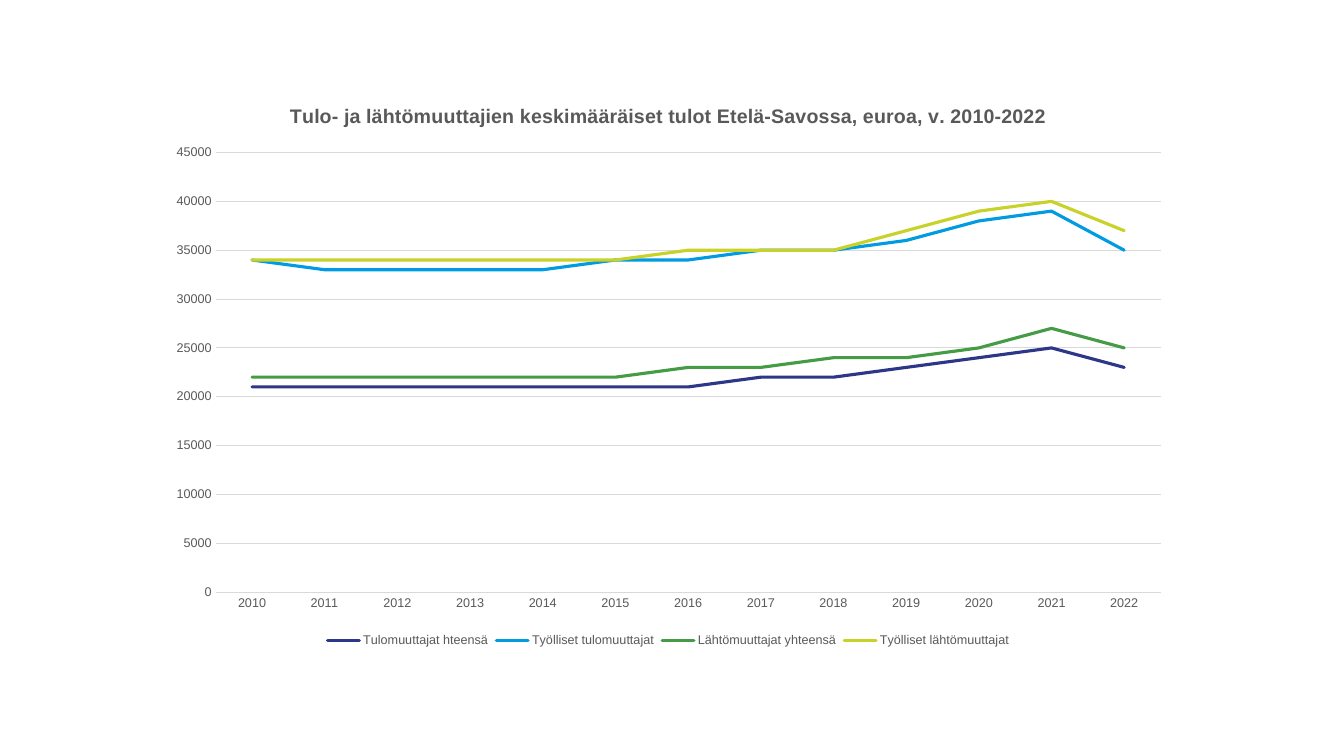
from lxml.etree import SubElement
from pptx import Presentation
from pptx.chart.data import CategoryChartData
from pptx.dml.color import RGBColor
from pptx.enum.chart import XL_CHART_TYPE, XL_LEGEND_POSITION, XL_TICK_MARK
from pptx.oxml.ns import qn
from pptx.util import Cm, Pt

NAVY = RGBColor(0x2D, 0x37, 0x87)
BLUE = RGBColor(0x00, 0x9B, 0xE1)
GREEN = RGBColor(0x46, 0x9B, 0x46)
LIME = RGBColor(0xC8, 0xD2, 0x28)
TEXT_GREY = RGBColor(0x59, 0x59, 0x59)
LINE_GREY = RGBColor(0xD9, 0xD9, 0xD9)

TITLE = "Tulo- ja lähtömuuttajien keskimääräiset tulot Etelä-Savossa, euroa, v. 2010-2022"
YEARS = range(2010, 2023)
# Name, colour and mean income in thousands of euros
INCOMES = [
    ("Tulomuuttajat hteensä", NAVY,
     (21, 21, 21, 21, 21, 21, 21, 22, 22, 23, 24, 25, 23)),
    ("Työlliset tulomuuttajat", BLUE,
     (34, 33, 33, 33, 33, 34, 34, 35, 35, 36, 38, 39, 35)),
    ("Lähtömuuttajat yhteensä", GREEN,
     (22, 22, 22, 22, 22, 22, 23, 23, 24, 24, 25, 27, 25)),
    ("Työlliset lähtömuuttajat", LIME,
     (34, 34, 34, 34, 34, 34, 35, 35, 35, 37, 39, 40, 37)),
]
LABEL_FONT = {"name": "Arial", "size": Pt(9), "bold": False}
TITLE_FONT = {"name": "Arial", "size": Pt(14), "bold": True}
VALUE_SCALE = {"minimum_scale": 0, "maximum_scale": 45000, "major_unit": 5000}


def set_attributes(target, values):
    for name, value in values.items():
        setattr(target, name, value)


def format_font(font, values):
    set_attributes(font, values)
    font.color.rgb = TEXT_GREY


def format_line(line, color, width):
    line.color.rgb = color
    line.width = Pt(width)


def place(element, values):
    """Set a manual layout, in shares of the chart area."""
    layout = element.find(qn("c:layout"))
    if layout is None:
        layout = SubElement(element, qn("c:layout"))
        element.insert(0, layout)
    manual = SubElement(layout, qn("c:manualLayout"))
    for name, value in values.items():
        SubElement(manual, qn(f"c:{name}")).set("val", str(value))


def add_income_chart(page):
    data = CategoryChartData(number_format="0")
    data.categories = [str(year) for year in YEARS]
    for name, _, thousands in INCOMES:
        data.add_series(name, [value * 1000 for value in thousands])
    return page.shapes.add_chart(
        XL_CHART_TYPE.LINE, Cm(3.94), Cm(2.08), Cm(25.8), Cm(14.35), data).chart


def format_title(chart):
    chart.has_title = True
    frame = chart.chart_title.text_frame
    frame.text = TITLE
    format_font(frame.paragraphs[0].runs[0].font, TITLE_FONT)
    place(chart.chart_title.element,
          {"xMode": "edge", "yMode": "edge", "x": 0.127, "y": 0.03})


def format_axes(chart):
    for axis in (chart.category_axis, chart.value_axis):
        set_attributes(axis, {"major_tick_mark": XL_TICK_MARK.NONE,
                              "minor_tick_mark": XL_TICK_MARK.NONE})
        format_font(axis.tick_labels.font, LABEL_FONT)
    format_line(chart.category_axis.format.line, LINE_GREY, 0.75)
    values = chart.value_axis
    set_attributes(values, VALUE_SCALE)
    values.format.line.fill.background()
    values.has_major_gridlines = True
    format_line(values.major_gridlines.format.line, LINE_GREY, 0.75)
    set_attributes(values.tick_labels,
                   {"number_format": "0", "number_format_is_linked": False})


def format_series(chart):
    plot = chart.plots[0]
    plot.vary_by_categories = False
    for series, (_, color, _) in zip(plot.series, INCOMES):
        series.smooth = False
        format_line(series.format.line, color, 2.25)
    # Round line ends
    for outline in chart.element.iterfind(
            ".//" + qn("c:ser") + "/" + qn("c:spPr") + "/" + qn("a:ln")):
        outline.set("cap", "rnd")


def format_legend(chart):
    chart.has_legend = True
    set_attributes(chart.legend, {"position": XL_LEGEND_POSITION.BOTTOM,
                                  "include_in_layout": False})
    format_font(chart.legend.font, LABEL_FONT)


def main():
    deck = Presentation()
    set_attributes(deck, {"slide_width": Cm(33.87), "slide_height": Cm(19.05)})
    page = deck.slides.add_slide(deck.slide_layouts[6])

    # Income chart
    chart = add_income_chart(page)
    set_attributes(chart.font, {"name": "Arial", "size": Pt(10)})
    format_title(chart)
    format_axes(chart)
    format_series(chart)
    format_legend(chart)

    # Inner plot area
    place(chart.element.find(".//" + qn("c:plotArea")),
          {"layoutTarget": "inner", "xMode": "edge", "yMode": "edge",
           "x": 0.058, "y": 0.123, "w": 0.923, "h": 0.772})

    deck.save("out.pptx")


if __name__ == "__main__":
    main()
